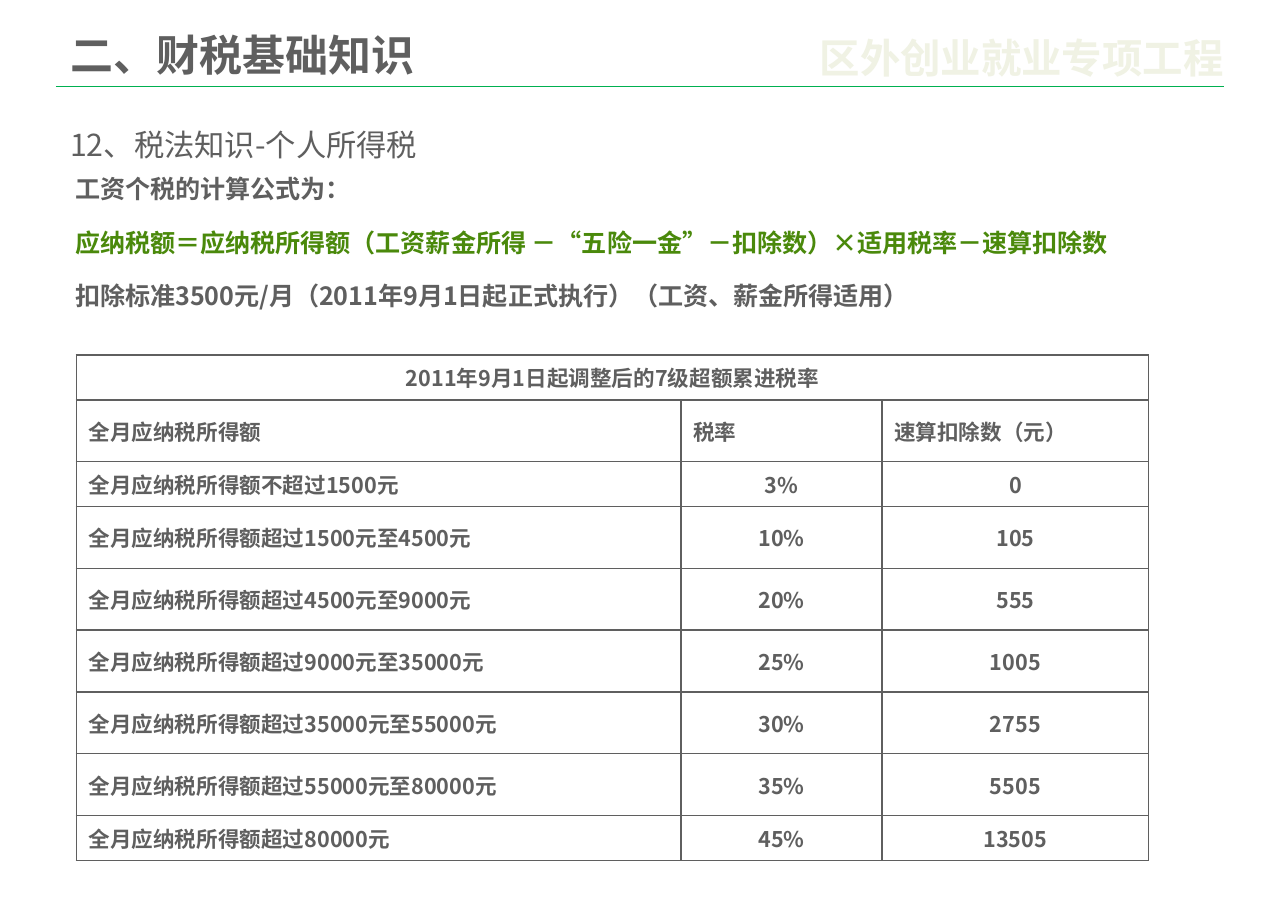
from lxml.etree import SubElement
from pptx import Presentation
from pptx.dml.color import RGBColor
from pptx.enum.shapes import MSO_CONNECTOR
from pptx.enum.text import MSO_ANCHOR, MSO_AUTO_SIZE, PP_ALIGN
from pptx.oxml.ns import qn
from pptx.util import Inches, Pt

GREY = RGBColor(0x5F, 0x5F, 0x5F)
GREEN = RGBColor(0x4A, 0x89, 0x0B)
PALE_OLIVE = RGBColor(0xF0, 0xF2, 0xE4)
RULE_GREEN = RGBColor(0x00, 0xB0, 0x50)
FONT = "Noto Sans CJK SC"

# The grid has 100 columns and 100 rows.
SLIDE_WIDTH, SLIDE_HEIGHT = Inches(10.63), Inches(7.5)
HEADING_LEFT, HEADING_WIDTH, HEADING_HEIGHT = 4.42, 79.4, 9.07
RULE_LEFT, RULE_RIGHT, RULE_TOP = 4.33, 95, 9.47
TABLE_COLUMNS = (46.94, 15.62, 20.7)
SHORT_ROW, TALL_ROW = 4.93, 6.8

BODY_LINES = [
    ("工资个税的计算公式为：", GREY),
    ("应纳税额＝应纳税所得额（工资薪金所得 －“五险一金”－扣除数）×适用税率－速算扣除数", GREEN),
    ("扣除标准3500元/月（2011年9月1日起正式执行）（工资、薪金所得适用）", GREY),
]
TABLE_TITLE = "2011年9月1日起调整后的7级超额累进税率"
TABLE_HEADER = ("全月应纳税所得额", "税率", "速算扣除数（元）")
TAX_BRACKETS = [
    ("不超过1500元", "3%", "0"),
    ("超过1500元至4500元", "10%", "105"),
    ("超过4500元至9000元", "20%", "555"),
    ("超过9000元至35000元", "25%", "1005"),
    ("超过35000元至55000元", "30%", "2755"),
    ("超过55000元至80000元", "35%", "5505"),
    ("超过80000元", "45%", "13505"),
]


def columns(count):
    return int(SLIDE_WIDTH * count / 100)


def rows(count):
    return int(SLIDE_HEIGHT * count / 100)


def place(shape, left, top, width, height):
    shape.left, shape.top = columns(left), rows(top)
    shape.width, shape.height = columns(width), rows(height)


def format_paragraph(paragraph, size, color, bold=True, align=PP_ALIGN.LEFT, font=FONT):
    paragraph.alignment = align
    for run in paragraph.runs:
        run.font.name = font
        run.font.size = Pt(size)
        run.font.bold = bold
        run.font.color.rgb = color
        SubElement(run.font._element, qn("a:ea"), typeface=FONT)


def set_frame(frame, anchor, inset=True):
    frame.word_wrap = True
    frame.auto_size = MSO_AUTO_SIZE.NONE
    frame.vertical_anchor = anchor
    frame.margin_left = frame.margin_right = Inches(0.11 if inset else 0)
    frame.margin_top = frame.margin_bottom = Inches(0.05 if inset else 0)


def add_text(slide, text, box):
    shape = slide.shapes.add_textbox(0, 0, 0, 0)
    place(shape, *box)
    shape.text_frame.text = text
    return shape.text_frame


def add_project_name(slide):
    frame = add_text(slide, "区外创业就业专项工程", (63, 2.93, 32, 6.67))
    set_frame(frame, MSO_ANCHOR.MIDDLE, inset=False)
    format_paragraph(frame.paragraphs[0], 24, PALE_OLIVE,
                     align=PP_ALIGN.RIGHT, font="Arial")


def add_headings(slide):
    title = slide.shapes.title
    place(title, HEADING_LEFT, 0.4, HEADING_WIDTH, HEADING_HEIGHT)
    title.text_frame.text = "二、财税基础知识"
    subtitle = add_text(slide, "12、税法知识-个人所得税",
                        (HEADING_LEFT, RULE_TOP, HEADING_WIDTH, HEADING_HEIGHT))
    for frame, size, bold in ((title.text_frame, 25.5, True), (subtitle, 18, False)):
        set_frame(frame, MSO_ANCHOR.BOTTOM)
        format_paragraph(frame.paragraphs[0], size, GREY, bold)


def fill_body(slide):
    body = slide.placeholders[1]
    place(body, 5.83, 19.07, 84, 19)
    frame = body.text_frame
    set_frame(frame, MSO_ANCHOR.TOP, inset=False)
    frame.text = "\n".join(text for text, _ in BODY_LINES)
    for index, (paragraph, (_, color)) in enumerate(zip(frame.paragraphs, BODY_LINES)):
        properties = paragraph._p.get_or_add_pPr()
        properties.set("marL", "0")
        properties.set("indent", "0")
        SubElement(properties, qn("a:buNone"))
        paragraph.space_before = Pt(14 if index else 0)
        format_paragraph(paragraph, 14.9, color)


def add_borders(cell):
    properties = cell._tc.get_or_add_tcPr()
    for side in ("lnL", "lnR", "lnT", "lnB"):
        line = SubElement(properties, qn(f"a:{side}"), w=str(Pt(1)))
        fill = SubElement(line, qn("a:solidFill"))
        SubElement(fill, qn("a:srgbClr"), val=str(GREY))


def format_cell(cell, text, align):
    add_borders(cell)
    cell.fill.background()
    cell.vertical_anchor = MSO_ANCHOR.MIDDLE
    cell.text_frame.text = text
    format_paragraph(cell.text_frame.paragraphs[0], 12.8, GREY, align=align)


def add_tax_table(slide):
    brackets = [("全月应纳税所得额" + income, rate, deduction)
                for income, rate, deduction in TAX_BRACKETS]
    content = [(TABLE_TITLE, "", ""), TABLE_HEADER, *brackets]
    short_rows = (0, 2, len(content) - 1)
    heights = [SHORT_ROW if index in short_rows else TALL_ROW
               for index in range(len(content))]
    table = slide.shapes.add_table(
        len(content), len(TABLE_COLUMNS), columns(5.93), rows(39.07),
        columns(sum(TABLE_COLUMNS)), rows(sum(heights))).table
    table.first_row = table.horz_banding = False
    for column, width in zip(table.columns, TABLE_COLUMNS):
        column.width = columns(width)
    for row_index, (row, height, texts) in enumerate(zip(table.rows, heights, content)):
        row.height = rows(height)
        for column_index, (cell, text) in enumerate(zip(row.cells, texts)):
            centered = row_index == 0 or (row_index > 1 and column_index > 0)
            format_cell(cell, text, PP_ALIGN.CENTER if centered else PP_ALIGN.LEFT)
    table.cell(0, 0).merge(table.cell(0, len(TABLE_COLUMNS) - 1))


def add_rule(slide):
    rule = slide.shapes.add_connector(
        MSO_CONNECTOR.STRAIGHT, columns(RULE_LEFT), rows(RULE_TOP),
        columns(RULE_RIGHT), rows(RULE_TOP))
    rule.line.color.rgb = RULE_GREEN
    rule.line.width = Pt(0.5)
    SubElement(rule._element.spPr, qn("a:effectLst"))


def main():
    presentation = Presentation()
    presentation.slide_width, presentation.slide_height = SLIDE_WIDTH, SLIDE_HEIGHT
    slide = presentation.slides.add_slide(presentation.slide_layouts[1])
    add_project_name(slide)
    add_headings(slide)
    fill_body(slide)
    add_tax_table(slide)
    add_rule(slide)
    presentation.save("out.pptx")


if __name__ == "__main__":
    main()
